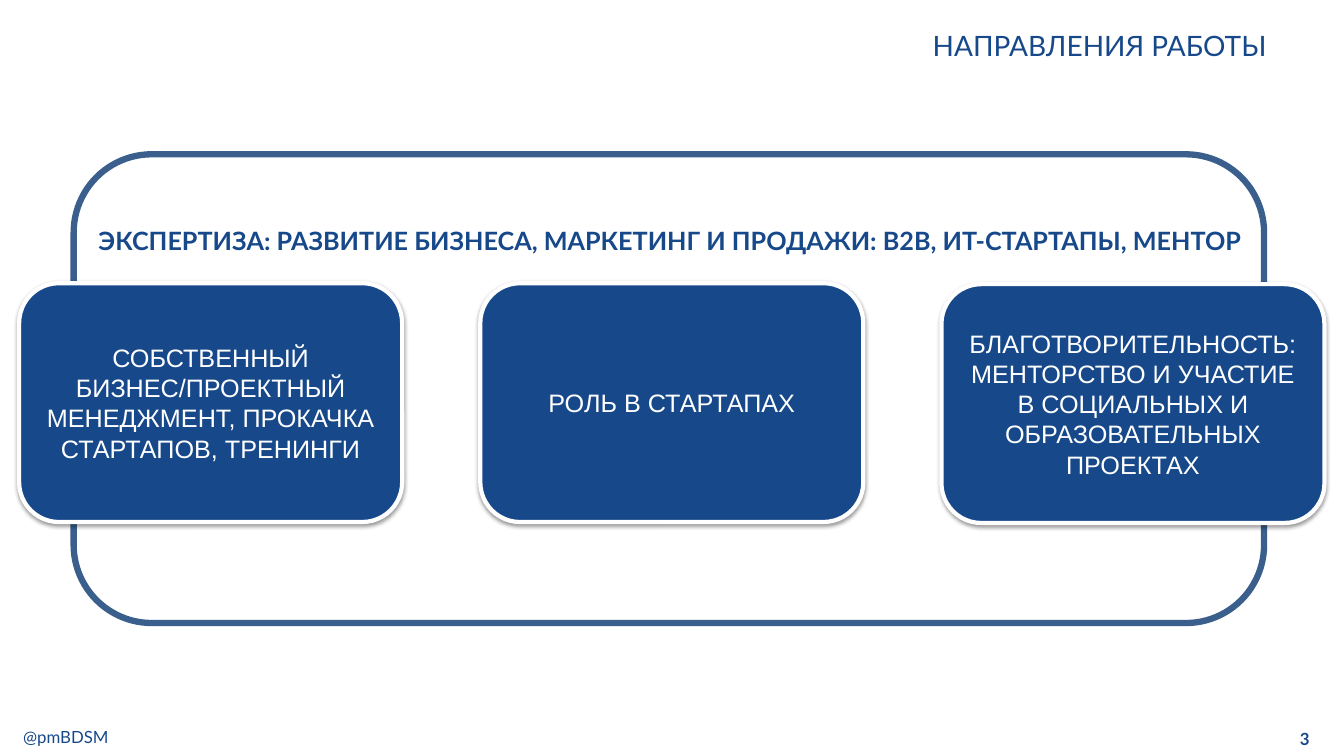
from lxml.etree import SubElement
from pptx import Presentation
from pptx.dml.color import RGBColor
from pptx.enum.shapes import MSO_SHAPE
from pptx.enum.text import MSO_ANCHOR, PP_ALIGN
from pptx.oxml.ns import qn
from pptx.util import Pt

COLORS = {"navy": "16488A", "steel": "3A5F8C", "white": "FFFFFF", "black": "000000"}
CARDS = [
    ("СОБСТВЕННЫЙ БИЗНЕС/ПРОЕКТНЫЙ МЕНЕДЖМЕНТ, ПРОКАЧКА СТАРТАПОВ, ТРЕНИНГИ", 202.3),
    ("РОЛЬ В СТАРТАПАХ", 202.3),
    ("БЛАГОТВОРИТЕЛЬНОСТЬ: МЕНТОРСТВО И УЧАСТИЕ В СОЦИАЛЬНЫХ И "
     "ОБРАЗОВАТЕЛЬНЫХ ПРОЕКТАХ", 203),
]


def color(name):
    return RGBColor.from_string(COLORS[name])


def write(shape, text, size=18, font="Lato", ink="navy", bold=False,
          align=PP_ALIGN.CENTER, anchor=MSO_ANCHOR.TOP, wrap=True):
    """Put formatted text into a shape."""
    frame = shape.text_frame
    frame.word_wrap = wrap
    frame.vertical_anchor = anchor
    para = frame.paragraphs[0]
    para.alignment = align
    run = para.add_run()
    run.text = text
    run.font.size = Pt(size)
    run.font.name = font
    run.font.bold = bold
    run.font.color.rgb = color(ink)


def add_label(slide, box, text, **style):
    write(slide.shapes.add_textbox(*map(Pt, box)), text, **style)


def add_panel(slide, box, fill, line, width):
    panel = slide.shapes.add_shape(MSO_SHAPE.ROUNDED_RECTANGLE, *map(Pt, box))
    panel.shadow.inherit = False
    panel.fill.solid()
    panel.fill.fore_color.rgb = color(fill)
    panel.line.color.rgb = color(line)
    panel.line.width = Pt(width)
    return panel


def add_shadow(shape):
    effects = shape.element.spPr.find(qn("a:effectLst"))
    shadow = SubElement(effects, qn("a:outerShdw"), blurRad=str(Pt(3.1)),
                        dist=str(Pt(1.6)), dir="5400000", rotWithShape="0")
    tint = SubElement(shadow, qn("a:srgbClr"), val=COLORS["black"])
    SubElement(tint, qn("a:alpha"), val="38000")


def add_card(slide, box, text):
    card = add_panel(slide, box, "navy", "white", 3)
    add_shadow(card)
    write(card, text, font="Arial", ink="white", anchor=MSO_ANCHOR.MIDDLE)


def set_title(slide, box, text):
    title = slide.shapes.title
    title.left, title.top, title.width, title.height = map(Pt, box)
    write(title, text, size=20, align=PP_ALIGN.RIGHT, anchor=MSO_ANCHOR.MIDDLE)


def main():
    deck = Presentation()
    deck.slide_width, deck.slide_height = Pt(960), Pt(540)
    slide = deck.slides.add_slide(deck.slide_layouts[5])

    add_label(slide, (9.4, 515.5, 78.5, 21.6), "@pmBDSM", size=12,
              align=PP_ALIGN.LEFT, wrap=False)
    add_panel(slide, (52.6, 110.2, 850.3, 334.8), "white", "steel", 4.5)
    set_title(slide, (48, 21.6, 864, 21.6), "НАПРАВЛЕНИЯ РАБОТЫ")
    add_label(slide, (903.6, 517, 56.9, 21.6), "3", size=12, bold=True)
    add_label(slide, (31, 157.7, 895, 28.8),
              "ЭКСПЕРТИЗА: РАЗВИТИЕ БИЗНЕСА, МАРКЕТИНГ И ПРОДАЖИ: "
              "B2B, ИТ-СТАРТАПЫ, МЕНТОР", bold=True)
    for index, (text, top) in enumerate(CARDS):
        add_card(slide, (13.7 + index * 329.4, top, 273.6, 170.6), text)

    deck.save("out.pptx")


if __name__ == "__main__":
    main()
